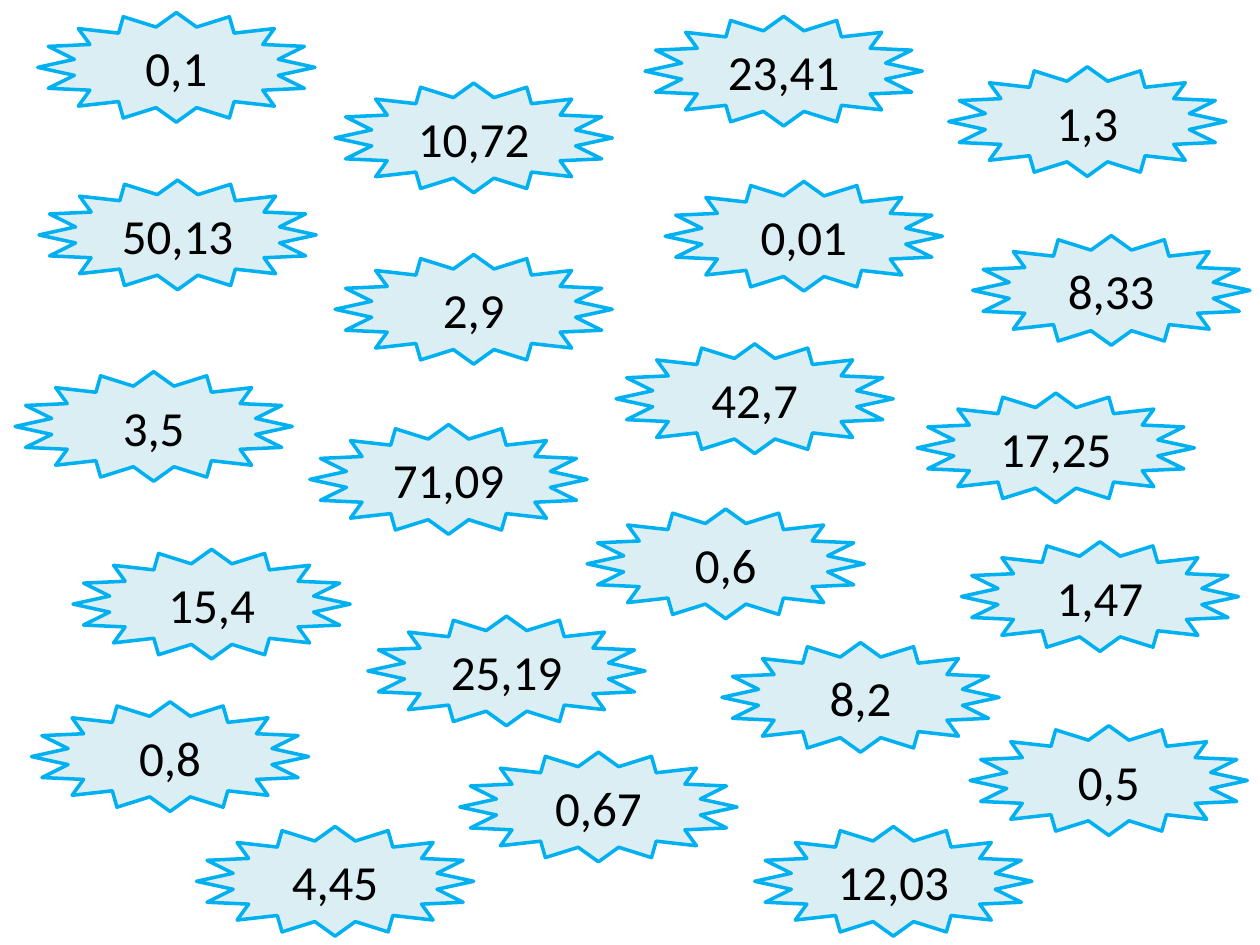
import dataclasses

import pptx
import pptx.dml.color
import pptx.enum.shapes
import pptx.enum.text
import pptx.util

Inches = pptx.util.Inches
RGB = pptx.dml.color.RGBColor


@dataclasses.dataclass(frozen=True)
class Theme:
    """Colours and type sizes of the slide."""
    fill: RGB = RGB(0xDB, 0xEE, 0xF4)
    line: RGB = RGB(0x00, 0xB0, 0xF0)
    ink: RGB = RGB(0, 0, 0)
    font: str = "Calibri"
    size: int = 28
    width: int = 2


THEME = Theme()
STAR = (2.2, 0.87)
STARS = [
    ("50,13", 0.31, 1.43), ("2,9", 2.66, 2.02), ("42,7", 4.89, 2.73),
    ("17,25", 7.28, 3.12), ("0,01", 5.28, 1.44), ("8,33", 7.72, 1.87),
    ("1,3", 7.53, 0.53), ("0,1", 0.3, 0.1), ("10,72", 2.66, 0.66),
    ("23,41", 5.12, 0.13), ("3,5", 0.12, 2.95), ("71,09", 2.46, 3.37),
    ("0,67", 3.65, 5.97), ("4,45", 1.56, 6.56), ("0,8", 0.25, 5.57),
    ("25,19", 2.92, 4.89), ("15,4", 0.58, 4.36), ("0,6", 4.66, 4.04),
    ("8,2", 5.73, 5.1), ("0,5", 7.7, 5.76), ("12,03", 5.99, 6.56),
    ("1,47", 7.63, 4.3),
]


def add_star(slide, text, box):
    """Draw one star with its number inside the given box."""
    kind = pptx.enum.shapes.MSO_SHAPE.STAR_16_POINT
    star = slide.shapes.add_shape(kind, *map(Inches, box))
    star.shadow.inherit = False
    star.fill.solid()
    star.fill.fore_color.rgb = THEME.fill
    star.line.color.rgb = THEME.line
    star.line.width = pptx.util.Pt(THEME.width)
    frame = star.text_frame
    frame.vertical_anchor = pptx.enum.text.MSO_ANCHOR.MIDDLE
    para = frame.paragraphs[0]
    para.alignment = pptx.enum.text.PP_ALIGN.CENTER
    run = para.add_run()
    run.text = text
    run.font.name = THEME.font
    run.font.size = pptx.util.Pt(THEME.size)
    run.font.color.rgb = THEME.ink


def add_field(slide, box):
    """Scatter the stars over the given box."""
    left, top, wide, high = box
    for text, x, y in STARS:
        add_star(slide, text, (left + x * wide / 10, top + y * high / 7.5, *STAR))


def main():
    """Build and save the slide."""
    deck = pptx.Presentation()
    deck.slide_width, deck.slide_height = Inches(10), Inches(7.5)
    slide = deck.slides.add_slide(deck.slide_layouts[6])
    add_field(slide, (0, 0, 10, 7.5))
    deck.save("out.pptx")


if __name__ == "__main__":
    main()
